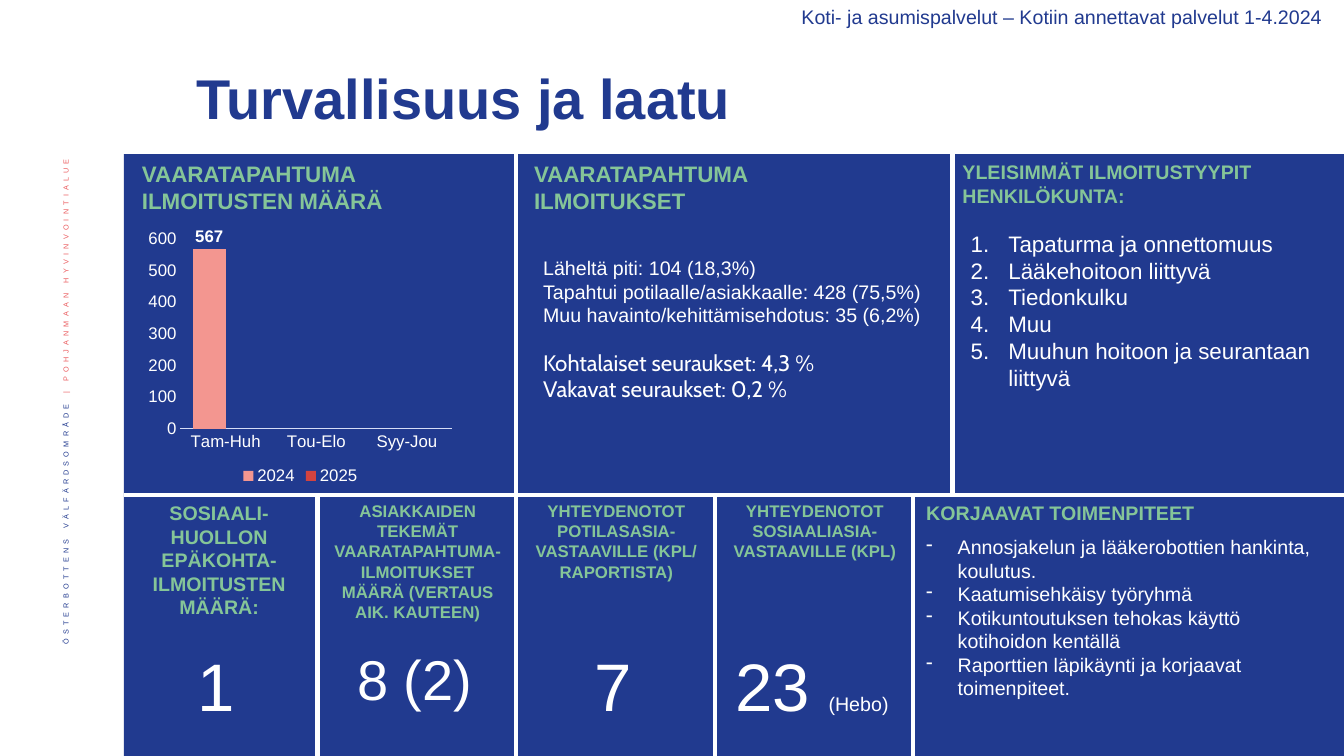
from dataclasses import dataclass

from lxml.etree import SubElement
from pptx import Presentation
from pptx.chart.data import CategoryChartData
from pptx.dml.color import RGBColor as RGB
from pptx.enum.chart import XL_CHART_TYPE as ChartType, XL_LEGEND_POSITION as LegendPos
from pptx.enum.chart import XL_LABEL_POSITION as LabelPos, XL_TICK_MARK as Tick
from pptx.enum.shapes import MSO_CONNECTOR as Connector, MSO_SHAPE as Shape
from pptx.enum.text import MSO_ANCHOR as Anchor, PP_ALIGN as Align
from pptx.oxml.ns import qn
from pptx.slide import Slide
from pptx.text.text import Font
from pptx.util import Pt


@dataclass(frozen=True)
class Theme:
    """Colours, fonts and type sizes."""
    navy: str = "213A8F"
    white: str = "FFFFFF"
    green: str = "85C598"
    coral: str = "EB5C5F"
    salmon: str = "F39690"
    red: str = "D3433F"
    axis: str = "D6DDF6"
    font: str = "Arial"
    accent_font: str = "Cabin"
    tiny: float = 9
    small: float = 12
    body: float = 14
    large: float = 16
    title: float = 40
    figure: float = 48


T = Theme()


@dataclass(frozen=True)
class Label:
    """A text box, one paragraph for each line."""
    left: float
    top: float
    width: float
    height: float
    lines: tuple[str, ...]
    size: float
    color: str = T.white
    bold: bool = False
    align: Align = Align.LEFT
    font: str = T.font
    bullet: str = ""
    indent: float = 0
    anchor: Anchor = Anchor.TOP


@dataclass(frozen=True)
class Metric:
    """A heading with its figure in the lower row."""
    heading: str
    heading_size: float
    value: str
    value_size: float
    note: str = ""


@dataclass(frozen=True)
class Rule:
    """A white dividing line."""
    x1: float
    y1: float
    x2: float
    y2: float


LEFT, TOP, MIDDLE, RIGHT, BOTTOM = 88.56, 109.44, 353.5, 960, 540
COLUMN = 141.84
COLUMN_LINES = [226.8 + COLUMN * i for i in range(4)]
MIDDLE_COLUMN, RIGHT_COLUMN = COLUMN_LINES[1], 680.4

RULES = [
    Rule(LEFT, MIDDLE, RIGHT, MIDDLE),
    *[Rule(x, MIDDLE, x, BOTTOM) for x in COLUMN_LINES],
    *[Rule(x, TOP, x, MIDDLE) for x in (MIDDLE_COLUMN, RIGHT_COLUMN)],
]

METRICS = [
    Metric("SOSIAALI-HUOLLON EPÄKOHTA-ILMOITUSTEN MÄÄRÄ:", T.body, "1", T.figure),
    Metric("ASIAKKAIDEN TEKEMÄT VAARATAPAHTUMA-ILMOITUKSET MÄÄRÄ (VERTAUS AIK. KAUTEEN)",
           T.small, "8 (2)", T.title),
    Metric("YHTEYDENOTOT POTILASASIA-VASTAAVILLE (KPL/ RAPORTISTA)", T.small, "7", T.figure),
    Metric("YHTEYDENOTOT SOSIAALIASIA-VASTAAVILLE (KPL)", T.small, "23 ", T.figure, "(Hebo)"),
]

LABELS = [
    Label(133.2, 33.84, 718.56, 71.28, ("Turvallisuus ja laatu",), T.title, T.navy, True,
          anchor=Anchor.MIDDLE),
    Label(529.9, 0, 421.9, 24.5,
          ("Koti- ja asumispalvelut – Kotiin annettavat palvelut 1-4.2024",),
          T.body, T.navy, align=Align.RIGHT),
    Label(94.3, 110.9, 194.4, 46, ("VAARATAPAHTUMA ILMOITUSTEN MÄÄRÄ",), T.large, T.green, True),
    Label(374.4, 110.9, 194.4, 46, ("VAARATAPAHTUMA ILMOITUKSET",), T.large, T.green, True),
    Label(RIGHT_COLUMN, 110.9, 279.6, 41, ("YLEISIMMÄT ILMOITUSTYYPIT HENKILÖKUNTA:",),
          T.body, T.green, True),
    Label(686.2, 160.6, 269.3, 143.3,
          ("Tapaturma ja onnettomuus", "Lääkehoitoon liittyvä", "Tiedonkulku", "Muu",
           "Muuhun hoitoon ja seurantaan liittyvä"), T.large, bullet="1.", indent=27),
    Label(380.9, 179.3, 285.8, 58.3,
          ("Läheltä piti: 104 (18,3%)", "Tapahtui potilaalle/asiakkaalle: 428 (75,5%)",
           "Muu havainto/kehittämisehdotus: 35 (6,2%)"), T.body),
    Label(380.9, 245.5, 259.9, 46,
          ("Kohtalaiset seuraukset: 4,3 %", "Vakavat seuraukset: 0,2 %"),
          T.large, font=T.accent_font),
    Label(654.5, 354.24, 301.7, 24.5, ("KORJAAVAT TOIMENPITEET",), T.body, T.green, True),
    Label(654.5, 378.7, 301.7, 161,
          ("Annosjakelun ja lääkerobottien hankinta, koulutus.", "Kaatumisehkäisy työryhmä",
           "Kotikuntoutuksen tehokas käyttö kotihoidon kentällä",
           "Raporttien läpikäynti ja korjaavat toimenpiteet."), T.body, bullet="-", indent=22.5),
]


def style(font: Font, size: float, color: str, bold: bool = False, name: str = T.font) -> None:
    """Set the look of a font."""
    font.name, font.size, font.bold = name, Pt(size), bold
    font.color.rgb = RGB.from_string(color)


def add_label(s: Slide, label: Label):
    """Add a text box and return its text frame."""
    sp = s.shapes.add_textbox(Pt(label.left), Pt(label.top), Pt(label.width), Pt(label.height))
    tf = sp.text_frame
    tf.text = "\n".join(label.lines)
    tf.word_wrap, tf.vertical_anchor = True, label.anchor
    for p in tf.paragraphs:
        p.alignment = label.align
        if label.bullet:
            pPr = p._p.get_or_add_pPr()
            pPr.set("marL", str(Pt(label.indent)))
            pPr.set("indent", str(-Pt(label.indent)))
            if label.bullet == "1.":
                SubElement(pPr, qn("a:buAutoNum"), type="arabicPeriod")
            else:
                SubElement(pPr, qn("a:buChar"), char=label.bullet)
        for r in p.runs:
            style(r.font, label.size, label.color, label.bold, label.font)
    return tf


def add_panel(s: Slide, left: float, top: float, height: float, color: str) -> None:
    """Add a plain rectangle that reaches the right edge."""
    sp = s.shapes.add_shape(Shape.RECTANGLE, Pt(left), Pt(top), Pt(RIGHT - left), Pt(height))
    sp.shadow.inherit = False
    sp.fill.solid()
    sp.fill.fore_color.rgb = RGB.from_string(color)
    sp.line.fill.background()


def add_rule(s: Slide, rule: Rule) -> None:
    """Add a dividing line."""
    c = s.shapes.add_connector(Connector.STRAIGHT, Pt(rule.x1), Pt(rule.y1),
                               Pt(rule.x2), Pt(rule.y2))
    c.line.color.rgb = RGB.from_string(T.white)
    c.line.width = Pt(3)
    SubElement(c._element.spPr, qn("a:effectLst"))


def add_metric(s: Slide, column: int, metric: Metric) -> None:
    """Add a heading and figure in a column."""
    x = COLUMN * column
    add_label(s, Label(87.8 + x, 354.24, 137.5, 94, (metric.heading,), metric.heading_size,
                       T.green, True, Align.CENTER))
    tf = add_label(s, Label(83.5 + x, 456.5, COLUMN, 65.5, (metric.value,), metric.value_size,
                            align=Align.CENTER))
    if metric.note:
        r = tf.paragraphs[0].add_run()
        r.text = metric.note
        style(r.font, T.body, T.white)


def add_side_text(s: Slide) -> None:
    """Add the vertical organisation name."""
    tf = add_label(s, Label(30.2, 102.2, 37.4, 412.6, ("ÖSTERBOTTENS VÄLFÄRDSOMRÅDE ",),
                            T.tiny, T.navy, align=Align.RIGHT, anchor=Anchor.MIDDLE))
    tf._txBody.bodyPr.set("vert", "vert270")
    p = tf.paragraphs[0]
    p.line_spacing = 0.9
    r = p.add_run()
    r.text = "| POHJANMAAN HYVINVOINTIALUE "
    style(r.font, T.tiny, T.coral)
    for r in p.runs:
        r._r.get_or_add_rPr().set("baseline", "30000")
        r._r.get_or_add_rPr().set("spc", "300")


def add_incident_chart(s: Slide) -> None:
    """Add the chart of incident reports."""
    data = CategoryChartData()
    data.categories = ["Tam-Huh", "Tou-Elo", "Syy-Jou"]
    data.add_series("2024", [567, None, None])
    data.add_series("2025", [None, None, None])
    chart = s.shapes.add_chart(ChartType.COLUMN_CLUSTERED, Pt(101.5), Pt(160.6),
                               Pt(226.1), Pt(188.6), data).chart
    style(chart.font, T.small, T.white)
    chart.has_title = False
    chart.has_legend = True
    chart.legend.position = LegendPos.BOTTOM
    chart.legend.include_in_layout = False
    style(chart.legend.font, T.small, T.white)
    cat, val = chart.category_axis, chart.value_axis
    for axis in (cat, val):
        axis.major_tick_mark = axis.minor_tick_mark = Tick.NONE
        axis.has_major_gridlines = False
        style(axis.tick_labels.font, T.small, T.white)
    cat.format.line.color.rgb = RGB.from_string(T.axis)
    cat.format.line.width = Pt(0.75)
    val.format.line.fill.background()
    val.minimum_scale, val.maximum_scale, val.major_unit = 0, 600, 100
    plot = chart.plots[0]
    plot.gap_width, plot.overlap, plot.vary_by_categories = 75, 0, False
    for series, color in zip(plot.series, (T.salmon, T.red)):
        series.format.fill.solid()
        series.format.fill.fore_color.rgb = RGB.from_string(color)
        labels = series.data_labels
        labels.show_value, labels.position = True, LabelPos.OUTSIDE_END
        style(labels.font, T.small, T.white, True)


def main() -> None:
    """Build and save the slide."""
    prs = Presentation()
    prs.slide_width, prs.slide_height = Pt(RIGHT), Pt(BOTTOM)
    s = prs.slides.add_slide(prs.slide_layouts[6])
    add_side_text(s)
    add_panel(s, LEFT, 0, BOTTOM, T.navy)
    add_panel(s, 82.8, 0, TOP + 0.5, T.white)
    for rule in RULES:
        add_rule(s, rule)
    for label in LABELS:
        add_label(s, label)
    for column, metric in enumerate(METRICS):
        add_metric(s, column, metric)
    add_incident_chart(s)
    prs.save("out.pptx")


if __name__ == "__main__":
    main()
